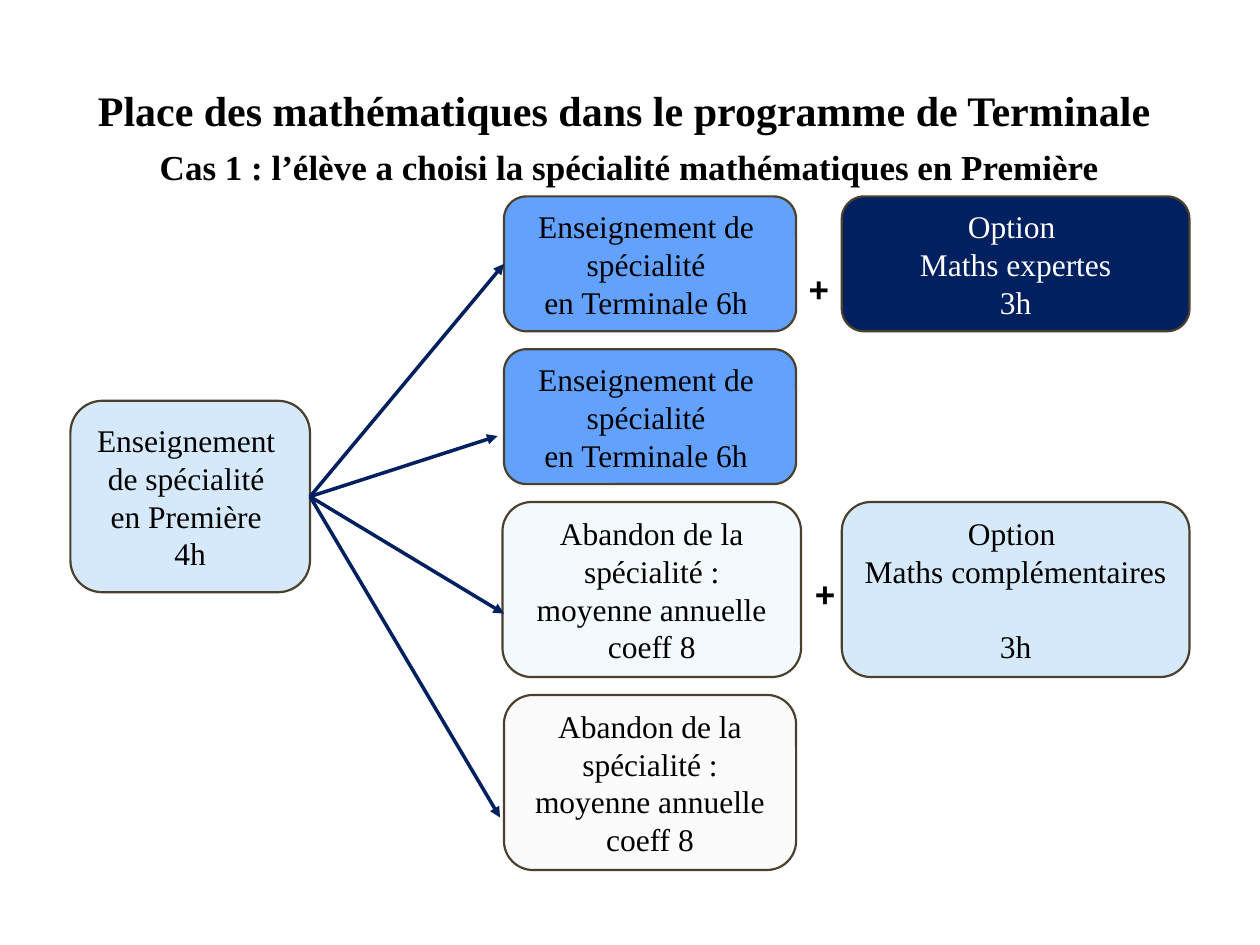
from lxml.etree import SubElement
from pptx import Presentation
from pptx.dml.color import RGBColor
from pptx.enum.shapes import MSO_CONNECTOR, MSO_SHAPE
from pptx.enum.text import MSO_ANCHOR, MSO_AUTO_SIZE, PP_ALIGN
from pptx.oxml.ns import qn
from pptx.util import Cm, Pt

# Content
TITLE = [("Place des mathématiques dans le programme de Terminale ", 24),
         ("Cas 1 : l’élève a choisi la spécialité mathématiques en Première", 20)]
START = ["Enseignement ", "de spécialité ", "en Première ", "4h"]
KEEP = ["Enseignement de ", "spécialité ", "en Terminale 6h "]
DROP = ["Abandon de la spécialité : moyenne annuelle coeff 8"]
EXPERT = ["Option ", "Maths expertes", "3h"]
COMPLEMENTARY = ["Option ", "Maths complémentaires", "3h"]

COLORS = {"text": "000000", "white": "FFFFFF", "navy": "002060", "pale": "D6E9FA",
          "blue": "0066FF", "grey": "F2F2F2", "outline": "4A402E"}

# Paths, top to bottom (cm); tip None joins the arrow to the box
PATHS = [
    {"lines": KEEP, "fill": "blue", "opacity": 61, "left": 10.16, "width": 5.89,
     "height": 2.72, "tip": None},
    {"lines": KEEP, "fill": "blue", "opacity": 61, "left": 10.16, "width": 5.89,
     "height": 2.72, "tip": (10.03, 8.79)},
    {"lines": DROP, "fill": "pale", "opacity": 25, "left": 10.13, "width": 6.02,
     "height": 3.53, "tip": (10.16, 12.37)},
    {"lines": DROP, "fill": "grey", "opacity": 25, "left": 10.16, "width": 5.89,
     "height": 3.53, "tip": (10.08, 16.48)},
]
# Options by path number: lines, fill, text colour, left of the plus sign, space before hours
OPTIONS = {0: (EXPERT, "navy", "white", 16.05, 0),
           2: (COMPLEMENTARY, "pale", "text", 16.18, 21)}
TOP, GAP = 3.96, 0.36
OPTION_LEFT, OPTION_WIDTH = 16.97, 7.01


def color(name):
    return RGBColor.from_string(COLORS[name])


def style(paragraph, size, name="text", font="Times New Roman", bold=False):
    paragraph.font.size = Pt(size)
    paragraph.font.name = font
    paragraph.font.bold = bold
    paragraph.font.color.rgb = color(name)


def add_box(page, lines, left, top, width, height, fill, opacity=100, text="text"):
    box = page.shapes.add_shape(MSO_SHAPE.ROUNDED_RECTANGLE,
                                Cm(left), Cm(top), Cm(width), Cm(height))
    box.shadow.inherit = False
    box.fill.solid()
    box.fill.fore_color.rgb = color(fill)
    if opacity < 100:
        tint = box.fill._xPr.find(qn("a:solidFill"))[0]
        SubElement(tint, qn("a:alpha")).set("val", str(opacity * 1000))
    box.line.color.rgb = color("outline")
    box.line.width = Pt(1.25)
    frame = box.text_frame
    frame.word_wrap = True
    frame.vertical_anchor = MSO_ANCHOR.MIDDLE
    frame.text = "\n".join(lines)
    for paragraph in frame.paragraphs:
        paragraph.alignment = PP_ALIGN.CENTER
        style(paragraph, 18, text)
    return box


def add_arrow(page, source, target, tip):
    x, y = tip or (0, 0)
    arrow = page.shapes.add_connector(MSO_CONNECTOR.STRAIGHT, 0, 0, Cm(x), Cm(y))
    arrow.begin_connect(source, 3)
    if tip is None:
        arrow.end_connect(target, 1)
    arrow.line.color.rgb = color("navy")
    arrow.line.width = Pt(2)
    SubElement(arrow.line._get_or_add_ln(), qn("a:tailEnd")).set("type", "triangle")
    SubElement(arrow._element.spPr, qn("a:effectLst"))


def add_plus(page, left, top):
    box = page.shapes.add_textbox(Cm(left), Cm(top), Cm(0.91), Cm(1.09))
    box.text_frame.text = "+"
    style(box.text_frame.paragraphs[0], 20, font="Arial", bold=True)


def main():
    deck = Presentation()
    deck.slide_width, deck.slide_height = Cm(25.4), Cm(19.05)
    page = deck.slides.add_slide(deck.slide_layouts[5])

    # Title
    title = page.shapes.title
    title.left, title.top, title.width, title.height = Cm(1.17), Cm(1.52), Cm(23.04), Cm(2.44)
    frame = title.text_frame
    frame.text = "\n".join(line for line, size in TITLE)
    frame.word_wrap = True
    frame.auto_size = MSO_AUTO_SIZE.NONE
    frame.vertical_anchor = MSO_ANCHOR.MIDDLE
    for paragraph, (line, size) in zip(frame.paragraphs, TITLE):
        paragraph.alignment = PP_ALIGN.CENTER
        style(paragraph, size, bold=True)
    frame.paragraphs[0].space_after = Pt(6)

    # Starting point, then the four paths with their options
    start = add_box(page, START, 1.42, 8.08, 4.83, 3.86, "pale")
    top = TOP
    for number, path in enumerate(PATHS):
        height = path["height"]
        target = add_box(page, path["lines"], path["left"], top, path["width"], height,
                         path["fill"], path["opacity"])
        add_arrow(page, start, target, path["tip"])
        if number in OPTIONS:
            lines, fill, text, plus_left, space = OPTIONS[number]
            option = add_box(page, lines, OPTION_LEFT, top, OPTION_WIDTH, height, fill, text=text)
            option.text_frame.paragraphs[-1].space_before = Pt(space)
            add_plus(page, plus_left, top + 1.3)
        top += height + GAP

    deck.save("out.pptx")


if __name__ == "__main__":
    main()
